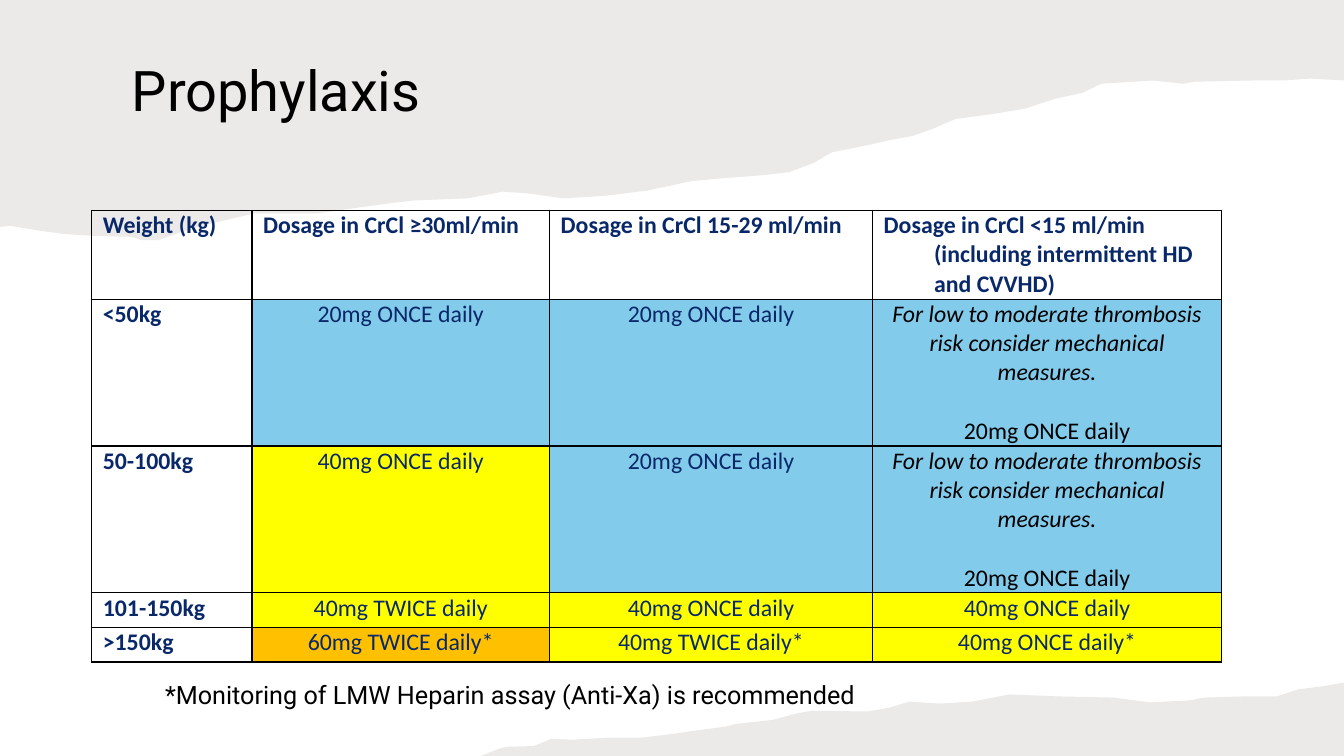
import pptx
import pptx.dml.color
import pptx.enum.text
import pptx.oxml
import pptx.oxml.ns
import pptx.util

Cm, Pt = pptx.util.Cm, pptx.util.Pt
ALIGN = pptx.enum.text.PP_ALIGN
rgb = pptx.dml.color.RGBColor.from_string

THEME = {
    "paper": "82766A", "ink": "000000", "navy": "092869",
    "low": "83CBEB", "medium": "FFFF00", "high": "FFC000",
    "heading_font": "Roboto", "table_font": "Calibri",
    "title_size": 40, "table_size": 17, "note_size": 18,
}


def add_span(para, text, font, size, color, bold=False, italic=False):
    span = para.add_run()
    span.text = text
    span.font.name = THEME[font]
    span.font.size = Pt(THEME[size])
    span.font.color.rgb = rgb(THEME[color])
    span.font.bold = bold
    span.font.italic = italic


def add_element(parent, xml):
    element = pptx.oxml.parse_xml(xml.replace(" ", f" {pptx.oxml.ns.nsdecls('a')} ", 1))
    parent.append(element)


# Page
deck = pptx.Presentation()
deck.slide_width, deck.slide_height = Cm(33.87), Cm(19.05)
page = deck.slides.add_slide(deck.slide_layouts[5])

# Title
title = page.shapes.title
title.left, title.top, title.width, title.height = Cm(3.07), Cm(1.04), Cm(25.76), Cm(2.64)
title.text_frame.auto_size = pptx.enum.text.MSO_AUTO_SIZE.NONE
title.text_frame.vertical_anchor = pptx.enum.text.MSO_ANCHOR.MIDDLE
para = title.text_frame.paragraphs[0]
para.alignment = ALIGN.LEFT
para.line_spacing = 0.9
add_span(para, "Prophylaxis", "heading_font", "title_size", "ink")

# Torn paper at the top and the bottom, behind the title (points in cm)
top_tear = [
    (0, 0), (33.87, 0), (33.87, 2.03), (33.02, 1.98), (32.36, 2.03), (31.55, 2.03),
    (30.1, 2.06), (29.82, 2.11), (29.06, 2.03), (27.76, 2.11), (27.28, 2.34),
    (26.59, 2.49), (25.83, 2.74), (25.04, 2.87), (24.08, 3), (23.5, 3.25),
    (22.99, 3.43), (22.43, 3.53), (22, 3.63), (20.96, 3.84), (20.5, 4.11),
    (19.89, 4.34), (19.18, 4.42), (18.11, 4.5), (17.4, 4.57), (16.33, 4.8),
    (15.29, 4.93), (14.2, 5), (13.36, 4.88), (12.67, 4.83), (11.79, 5),
    (10.46, 5.05), (9.91, 5.11), (8.69, 5.28), (7.98, 5.38), (6.4, 5.38),
    (5.72, 5.54), (4.88, 5.74), (3.99, 6.05), (3.56, 6.05), (3.33, 5.97),
    (2.26, 5.94), (1.55, 5.89), (1.04, 5.82), (0.25, 5.69), (0, 5.72),
]
bottom_tear = [
    (33.87, 19.05), (12.12, 19.05), (12.57, 18.87), (12.75, 18.82), (13.46, 18.8),
    (13.89, 18.62), (14.43, 18.64), (15.32, 18.59), (16.15, 18.59), (16.99, 18.49),
    (17.68, 18.39), (18.29, 18.31), (18.57, 18.24), (19.48, 18.14), (20.07, 17.98),
    (20.47, 17.91), (21.87, 17.93), (22.43, 17.83), (22.91, 17.68), (23.67, 17.73),
    (24.51, 17.68), (25.43, 17.5), (26.7, 17.55), (28.07, 17.58), (28.96, 17.7),
    (30, 17.65), (30.33, 17.58), (31.34, 17.55), (32.18, 17.55), (32.72, 17.37),
    (33.3, 17.3), (33.87, 17.2),
]
for edge in (top_tear, bottom_tear):
    points = [(Cm(x), Cm(y)) for x, y in edge]
    builder = page.shapes.build_freeform(*points[0])
    builder.add_line_segments(points[1:], close=True)
    tear = builder.convert_to_shape()
    tear.shadow.inherit = False
    tear.line.fill.background()
    tear.fill.solid()
    tear.fill.fore_color.rgb = rgb(THEME["paper"])
    color = tear.element.spPr.find(".//" + pptx.oxml.ns.qn("a:srgbClr"))
    add_element(color, '<a:alpha val="15000"/>')
    title.element.addprevious(tear.element)

# Dosage table: each cell is its text and its fill
ADVICE = "For low to moderate thrombosis risk consider mechanical measures."
rows = [
    [("Weight (kg)", None), ("Dosage in CrCl ≥30ml/min", None),
     ("Dosage in CrCl 15-29 ml/min", None),
     ("Dosage in CrCl <15 ml/min\n(including intermittent HD and CVVHD)", None)],
    [("<50kg", None), ("20mg ONCE daily", "low"), ("20mg ONCE daily", "low"),
     (ADVICE + "\n20mg ONCE daily", "low")],
    [("50-100kg", None), ("40mg ONCE daily", "medium"), ("20mg ONCE daily", "low"),
     (ADVICE + "\n20mg ONCE daily", "low")],
    [("101-150kg", None), ("40mg TWICE daily", "medium"), ("40mg ONCE daily", "medium"),
     ("40mg ONCE daily", "medium")],
    [(">150kg", None), ("60mg TWICE daily*", "high"), ("40mg TWICE daily*", "medium"),
     ("40mg ONCE daily*", "medium")],
]
widths = [4.04, 7.5, 8.14, 8.8]
heights = [2.24, 3.7, 3.7, 0.87, 0.87]
frame = page.shapes.add_table(len(rows), len(widths), Cm(2.31), Cm(5.3),
                              Cm(sum(widths)), Cm(sum(heights)))
table = frame.table
table.first_row = table.horz_banding = False
for column, width in zip(table.columns, widths):
    column.width = Cm(width)

for r, (row, height) in enumerate(zip(rows, heights)):
    table.rows[r].height = Cm(height)
    for c, (text, fill) in enumerate(row):
        cell = table.cell(r, c)
        cell.margin_left = cell.margin_right = Cm(0.28)
        cell.margin_top, cell.margin_bottom = Cm(0.02), 0

        # Borders and fill
        for side in ("lnL", "lnR", "lnT", "lnB"):
            add_element(cell._tc.get_or_add_tcPr(),
                        f'<a:{side} w="12700"><a:solidFill><a:srgbClr val="{THEME["ink"]}"/>'
                        f'</a:solidFill></a:{side}>')
        if fill:
            cell.fill.solid()
            cell.fill.fore_color.rgb = rgb(THEME[fill])
        else:
            cell.fill.background()

        # Text: headings hang, doses are centred
        para = cell.text_frame.paragraphs[0]
        lines = text.split("\n")
        if fill is None:
            properties = para._p.get_or_add_pPr()
            properties.set("marL", str(Cm(1.27)))
            properties.set("indent", str(Cm(-1.27)))
            for i, line in enumerate(lines):
                if i:
                    para.add_line_break()
                add_span(para, line, "table_font", "table_size", "navy", bold=True)
            continue
        advised = len(lines) > 1
        for i, line in enumerate(lines):
            if i:
                para = cell.text_frame.add_paragraph()
                para.space_before = Pt(21)
            para.alignment = ALIGN.CENTER
            add_span(para, line, "table_font", "table_size",
                     "ink" if advised else "navy", italic=line == ADVICE)

# Footnote
note = page.shapes.add_textbox(Cm(3.91), Cm(16.99), Cm(23.19), Cm(1.02))
note.text_frame.word_wrap = True
add_span(note.text_frame.paragraphs[0],
         "*Monitoring of LMW Heparin assay (Anti-Xa) is recommended",
         "heading_font", "note_size", "ink")

deck.save("out.pptx")
